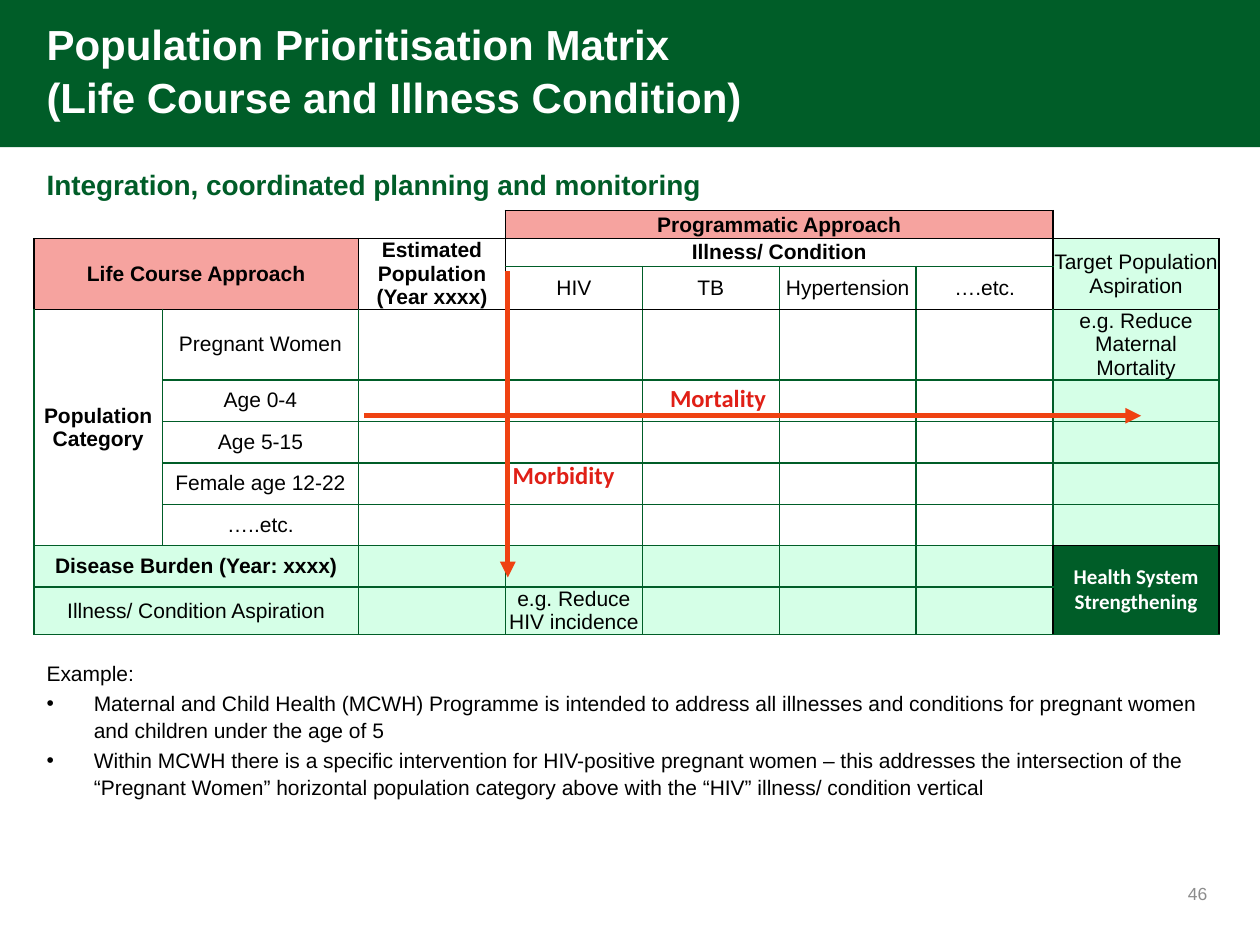
from lxml import etree
from pptx import Presentation
from pptx.dml.color import RGBColor
from pptx.enum import shapes, text
from pptx.oxml import ns
from pptx.util import Pt

GREEN, MINT, PINK = "005D28", "D5FFE7", "F6A39F"
BLACK, WHITE = "000000", "FFFFFF"
LEFT, MID, RIGHT = text.PP_ALIGN.LEFT, text.PP_ALIGN.CENTER, text.PP_ALIGN.RIGHT

COLS = [73.5, 112, 84] + [78.25] * 4 + [94.75]
ROWS = [16, 16, 24.3, 40.3] + [23.7] * 5 + [26.9]

# Merged blocks and black outlines: first row, first column, last row, last column
MERGED = [(0, 0, 0, 1), (0, 3, 0, 6), (1, 0, 2, 1), (1, 2, 2, 2), (1, 3, 1, 6),
          (1, 7, 2, 7), (3, 0, 7, 0), (8, 0, 8, 1), (9, 0, 9, 1), (8, 7, 9, 7)]
FRAMES = [(0, 3, 0, 6), (1, 0, 2, 1), (1, 2, 2, 2), (1, 3, 2, 6),
          (1, 7, 2, 7), (8, 7, 9, 7)]
BOLD = {(0, 3), (1, 0), (1, 2), (1, 3), (3, 0), (8, 0), (8, 7)}
WORDS = {
    (0, 3): "Programmatic Approach",
    (1, 0): "Life Course Approach",
    (1, 2): "Estimated Population (Year xxxx)",
    (1, 3): "Illness/ Condition",
    (1, 7): "Target Population Aspiration",
    (2, 3): "HIV", (2, 4): "TB", (2, 5): "Hypertension", (2, 6): "….etc.",
    (3, 0): "Population Category",
    (3, 1): "Pregnant Women",
    (3, 7): "e.g. Reduce Maternal Mortality",
    (4, 1): "Age 0-4", (5, 1): "Age 5-15",
    (6, 1): "Female age 12-22", (7, 1): "…..etc.",
    (8, 0): "Disease Burden (Year: xxxx)",
    (8, 7): "Health System Strengthening",
    (9, 0): "Illness/ Condition Aspiration",
    (9, 3): "e.g. Reduce HIV incidence",
}
NOTES = [
    "Example:",
    "Maternal and Child Health (MCWH) Programme is intended to address all illnesses "
    "and conditions for pregnant women and children under the age of 5",
    "Within MCWH there is a specific intervention for HIV-positive pregnant women – "
    "this addresses the intersection of the “Pregnant Women” horizontal population "
    "category above with the “HIV” illness/ condition vertical",
]


def tint(part, shade):
    part.rgb = RGBColor.from_string(shade)


def style(para, size, shade, bold=False, face="Arial", align=LEFT):
    para.alignment = align
    font = para.font
    font.name, font.size, font.bold = face, Pt(size), bold
    tint(font.color, shade)


def place(shape, x, y, w, h):
    shape.left, shape.top, shape.width, shape.height = Pt(x), Pt(y), Pt(w), Pt(h)


def mark(para, sign=None, indent=0):
    """Set the bullet, or none, and the hanging indent."""
    props = para._p.get_or_add_pPr()
    props.set("marL", str(Pt(indent)))
    props.set("indent", str(-Pt(indent)))
    item = etree.SubElement(props, ns.qn("a:buChar" if sign else "a:buNone"))
    if sign:
        item.set("char", sign)


def banner(slide, x, y, w, h):
    # Green band behind the title
    bar = slide.shapes.add_shape(shapes.MSO_SHAPE.RECTANGLE, Pt(x), Pt(y), Pt(w), Pt(h))
    bar.shadow.inherit = False
    bar.fill.solid()
    tint(bar.fill.fore_color, GREEN)
    bar.line.fill.background()
    slide.shapes._spTree.insert(2, bar._element)
    # Title
    title = slide.shapes.title
    place(title, x + 19.4, y + 12.2, 606, 54)
    frame = title.text_frame
    frame.text = "Population Prioritisation Matrix\v(Life Course and Illness Condition)"
    frame.auto_size = text.MSO_AUTO_SIZE.NONE
    frame.vertical_anchor = text.MSO_ANCHOR.MIDDLE
    para = frame.paragraphs[0]
    para.line_spacing = 1.06
    style(para, 24, WHITE, True)


def listing(body, lines, x, y, w, h, size, shade, bold=False):
    """Fill a body placeholder: a lead line, then bulleted lines."""
    place(body, x, y, w, h)
    frame = body.text_frame
    frame.text = "\n".join(lines)
    frame.auto_size = text.MSO_AUTO_SIZE.NONE
    frame.vertical_anchor = text.MSO_ANCHOR.TOP
    for i, para in enumerate(frame.paragraphs):
        para.line_spacing = 1.06
        para.space_before = Pt(2 if i else 0)
        mark(para, "•" if i else None, 27 if i else 0)
        style(para, size, shade, bold)


def edges(r, c):
    """Name the four sides of a cell so that neighbours share them."""
    return {"L": ("v", r, c), "R": ("v", r, c + 1),
            "T": ("h", r, c), "B": ("h", r + 1, c)}


def outline():
    dark = set()
    for top, left, low, right in FRAMES:
        for r in range(top, low + 1):
            dark |= {("v", r, left), ("v", r, right + 1)}
        for c in range(left, right + 1):
            dark |= {("h", top, c), ("h", low + 1, c)}
    return dark | {("h", 3, c) for c in range(len(COLS))}


def border(cell, side, shade):
    line = etree.SubElement(cell._tc.get_or_add_tcPr(), ns.qn("a:ln" + side), w=str(Pt(1)))
    if shade:
        fill = etree.SubElement(line, ns.qn("a:solidFill"))
        etree.SubElement(fill, ns.qn("a:srgbClr"), val=shade)
    else:
        etree.SubElement(line, ns.qn("a:noFill"))


def shade_at(r, c):
    if (r, c) == (8, 7):
        return GREEN
    if (r, c) in {(0, 3), (1, 0)}:
        return PINK
    return MINT if r >= 8 or (c == 7 and r) else None


def matrix(slide, x, y, w, h):
    grid = slide.shapes.add_table(len(ROWS), len(COLS), Pt(x), Pt(y), Pt(w), Pt(h)).table
    grid.first_row = grid.horz_banding = False
    for col, size in zip(grid.columns, COLS):
        col.width = Pt(size)
    for row, size in zip(grid.rows, ROWS):
        row.height = Pt(size)
    for top, left, low, right in MERGED:
        grid.cell(top, left).merge(grid.cell(low, right))
    dark = outline()
    for r in range(len(ROWS)):
        for c in range(len(COLS)):
            cell = grid.cell(r, c)
            # Borders come before the fill in the cell's properties
            for side, edge in edges(r, c).items():
                plain = None if r == 0 else GREEN
                border(cell, side, BLACK if edge in dark else plain)
            shade = shade_at(r, c)
            if shade:
                cell.fill.solid()
                tint(cell.fill.fore_color, shade)
            else:
                cell.fill.background()
            # Text
            cell.vertical_anchor = text.MSO_ANCHOR.MIDDLE
            last = (r, c) == (8, 7)
            if not last:
                cell.margin_left = cell.margin_right = 0
                cell.margin_top = cell.margin_bottom = 0
            para = cell.text_frame.paragraphs[0]
            if (r, c) in WORDS:
                para.text = WORDS[r, c]
            else:
                para._p.get_or_add_endParaRPr().set("sz", "1200")
            style(para, 12, WHITE if last else BLACK, (r, c) in BOLD,
                  "Calibri" if last else "Arial", MID)


def arrow(slide, x, y, w, h):
    line = slide.shapes.add_connector(shapes.MSO_CONNECTOR.STRAIGHT,
                                      Pt(x), Pt(y), Pt(x + w), Pt(y + h))
    line.line.width = Pt(3)
    tint(line.line.color, "EF4212")
    etree.SubElement(line.line._get_or_add_ln(), ns.qn("a:tailEnd"), type="triangle")
    etree.SubElement(line._element.spPr, ns.qn("a:effectLst"))


def label(slide, words, x, y, w, h, *look, **more):
    frame = slide.shapes.add_textbox(Pt(x), Pt(y), Pt(w), Pt(h)).text_frame
    frame.word_wrap = True
    frame.text = words
    style(frame.paragraphs[0], *look, **more)
    return frame


def axes(slide, x, y):
    """Draw the two arrows over the matrix, with their labels."""
    arrow(slide, x + 270.8, y + 34.6, 0, 175)
    arrow(slide, x + 188.7, y + 117.2, 444, 0)
    for words, dx, dy, w in [("Mortality", 356.4, 95, 108.7), ("Morbidity", 266.5, 139, 89.3)]:
        label(slide, words, x + dx, y + dy, w, 24.5, 14, "E01F16", True, "Calibri")


def main():
    deck = Presentation()
    deck.slide_width, deck.slide_height = Pt(720), Pt(540)
    slide = deck.slides.add_slide(deck.slide_layouts[3])
    head, body = slide.placeholders[1], slide.placeholders[2]
    banner(slide, 0, 0, 720, 84.2)
    listing(head, ["Integration, coordinated planning and monitoring"],
            19.4, 90.7, 677.5, 31, 16, GREEN, True)
    listing(body, NOTES, 19.4, 373, 677.5, 100.8, 12, BLACK)
    matrix(slide, 19.4, 120.4, sum(COLS), sum(ROWS))
    axes(slide, 19.4, 120.4)
    page = label(slide, "46", 652.3, 496.1, 44.6, 28.8, 10, "8C8C8C", align=RIGHT)
    page.vertical_anchor = text.MSO_ANCHOR.MIDDLE
    deck.save("out.pptx")


if __name__ == "__main__":
    main()
